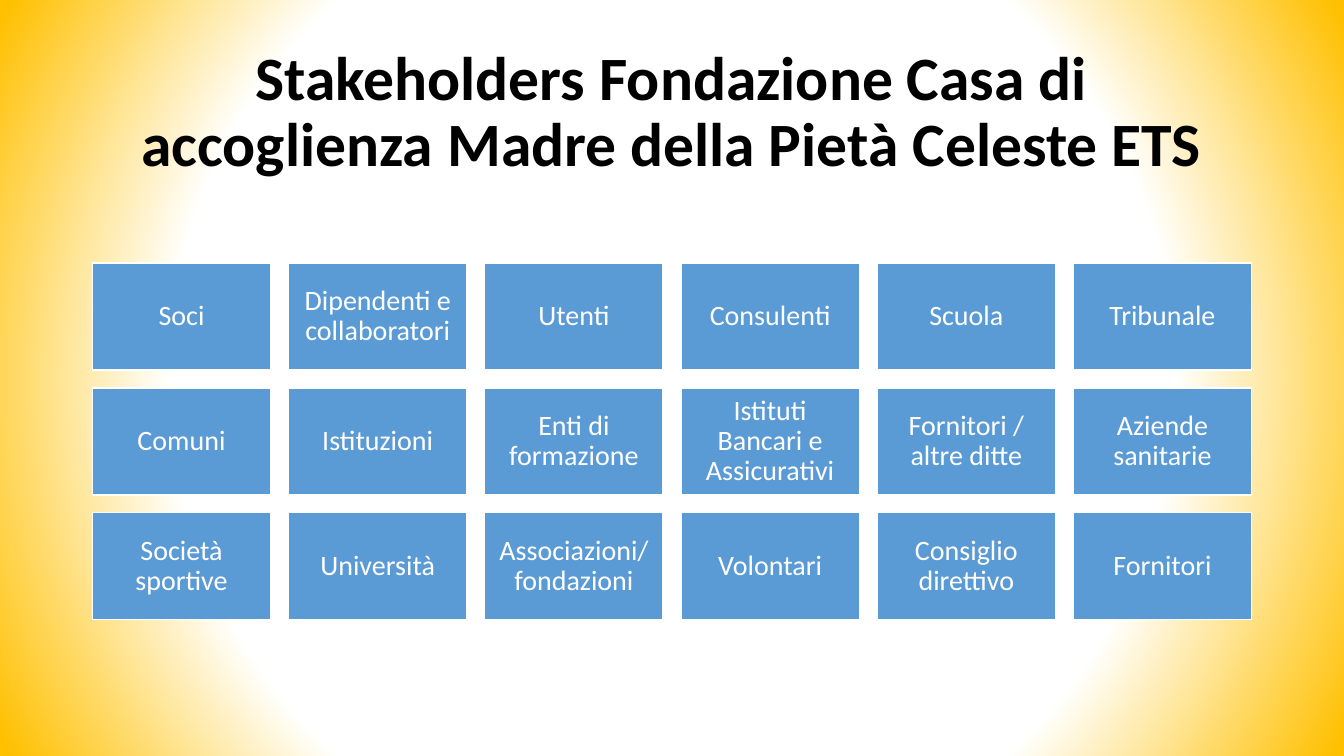
import pptx
import pptx.dml.color
import pptx.enum.shapes
import pptx.enum.text
import pptx.oxml
import pptx.oxml.ns
import pptx.util

Pt = pptx.util.Pt
HUES = {"box": "5B9BD5", "light": "FFFFFF", "dark": "000000", "gold": "FFC000"}
ROWS = [
    ["Soci", "Dipendenti e collaboratori", "Utenti", "Consulenti", "Scuola", "Tribunale"],
    ["Comuni", "Istituzioni", "Enti di formazione", "Istituti Bancari e Assicurativi",
     "Fornitori / altre ditte", "Aziende sanitarie"],
    ["Società sportive", "Università", "Associazioni/fondazioni", "Volontari",
     "Consiglio direttivo", "Fornitori"],
]
LEFT, TOP, WIDE, HIGH, GAP = 66, 187.9, 127.4, 76.44, 12.74


def paint(hue):
    return pptx.dml.color.RGBColor.from_string(HUES[hue])


def apply(item, values):
    for name, value in values.items():
        setattr(item, name, value)


class Deck:
    face = "Calibri"

    def __init__(self, wide, high):
        self.show = pptx.Presentation()
        apply(self.show, {"slide_width": Pt(wide), "slide_height": Pt(high)})
        self.slide = self.show.slides.add_slide(self.show.slide_layouts[5])

    def glow(self, stops):
        self.slide.background.fill.gradient()
        old = self.slide.element.find(".//" + pptx.oxml.ns.qn("a:gradFill"))
        marks = "".join(
            f'<a:gs pos="{spot * 1000}"><a:srgbClr val="{HUES[hue]}"/></a:gs>'
            for spot, hue in stops)
        new = pptx.oxml.parse_xml(
            f'<a:gradFill {pptx.oxml.ns.nsdecls("a")} rotWithShape="1">'
            f'<a:gsLst>{marks}</a:gsLst><a:path path="circle">'
            '<a:fillToRect l="50000" t="50000" r="50000" b="50000"/>'
            '</a:path></a:gradFill>')
        old.getparent().replace(old, new)

    def label(self, shape, text, size, hue, bold=False, inset=None):
        frame = shape.text_frame
        frame.text = text
        apply(frame, {
            "word_wrap": True,
            "auto_size": pptx.enum.text.MSO_AUTO_SIZE.NONE,
            "vertical_anchor": pptx.enum.text.MSO_ANCHOR.MIDDLE,
        })
        if inset is not None:
            sides = ("left", "top", "right", "bottom")
            apply(frame, {f"margin_{side}": Pt(inset) for side in sides})
        line = frame.paragraphs[0]
        apply(line, {"alignment": pptx.enum.text.PP_ALIGN.CENTER, "line_spacing": 0.9})
        apply(line.font, {"name": self.face, "size": Pt(size), "bold": bold})
        line.font.color.rgb = paint(hue)

    def title(self, text, left, top, wide, high):
        shape = self.slide.shapes.title
        apply(shape, {"left": Pt(left), "top": Pt(top),
                      "width": Pt(wide), "height": Pt(high)})
        self.label(shape, text, 44, "dark", bold=True)

    def box(self, text, left, top, wide, high):
        shape = self.slide.shapes.add_shape(
            pptx.enum.shapes.MSO_SHAPE.RECTANGLE,
            Pt(left), Pt(top), Pt(wide), Pt(high))
        shape.shadow.inherit = False
        shape.fill.solid()
        shape.fill.fore_color.rgb = paint("box")
        shape.line.color.rgb = paint("light")
        shape.line.width = Pt(1)
        self.label(shape, text, 20, "light", inset=6)


def main():
    deck = Deck(960, 540)
    deck.glow([(0, "light"), (65, "light"), (99, "gold")])
    deck.title("Stakeholders Fondazione Casa di accoglienza Madre della Pietà Celeste ETS",
               66, 28.75, 828, 104.4)
    for row, names in enumerate(ROWS):
        for col, name in enumerate(names):
            deck.box(name, LEFT + col * (WIDE + GAP), TOP + row * (HIGH + GAP), WIDE, HIGH)
    deck.show.save("out.pptx")


if __name__ == "__main__":
    main()
